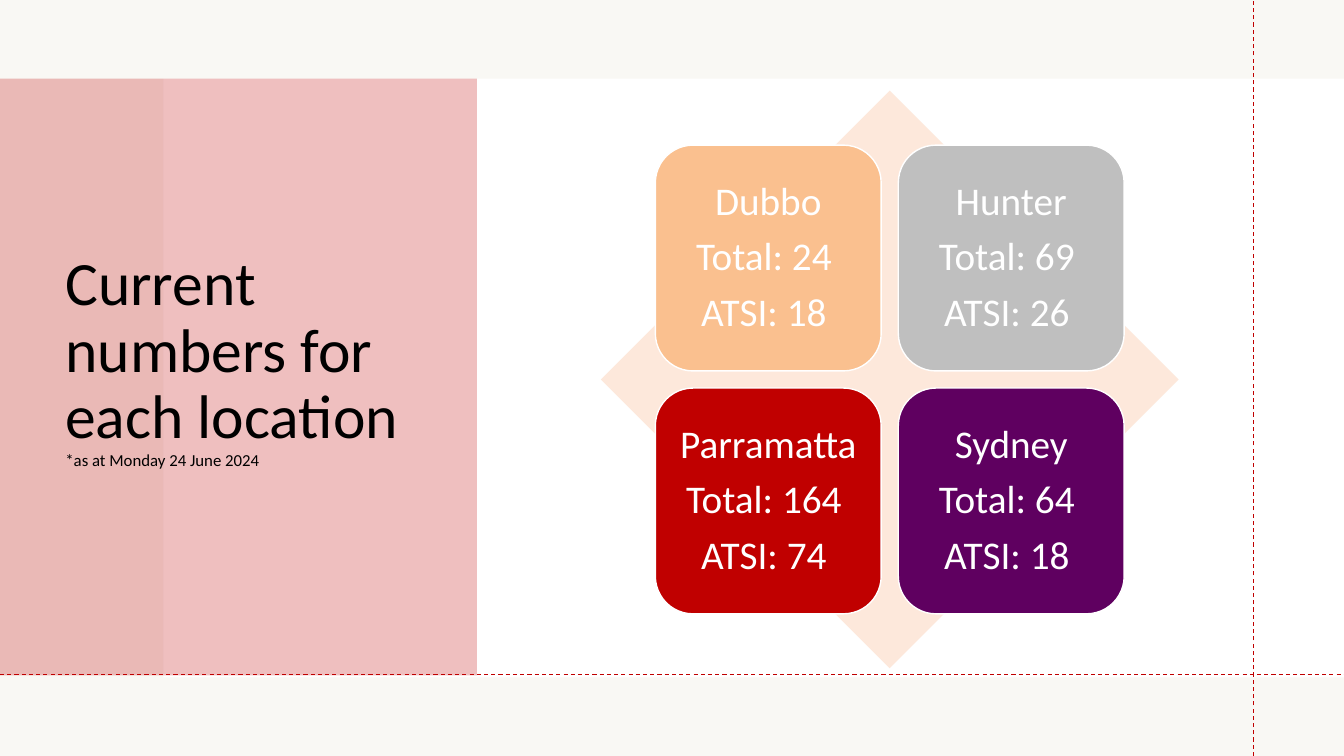
from pptx import Presentation
from pptx.dml.color import RGBColor
from pptx.enum.dml import MSO_LINE
from pptx.enum.shapes import MSO_CONNECTOR, MSO_SHAPE as SHAPE
from pptx.enum.text import MSO_ANCHOR, PP_ALIGN
from pptx.oxml.ns import qn
from pptx.util import Inches, Pt
from lxml import etree

# Content
TITLE = "Current numbers for each location"
NOTE = "*as at Monday 24 June 2024"
LOCATIONS = [
    ("FAC08F", ["Dubbo", "Total: 24 ", "ATSI: 18 "]),
    ("BFBFBF", ["Hunter", "Total: 69 ", "ATSI: 26 "]),
    ("C00000", ["Parramatta", "Total: 164 ", "ATSI: 74 "]),
    ("5F0060", ["Sydney", "Total: 64 ", "ATSI: 18 "]),
]

# Layout in inches
WIDTH, HEIGHT = 13.33, 7.5
BAND_TOP = 0.78
TILE_LEFT, TILE_TOP, TILE, TILE_STEP = 6.5, 1.44, 2.24, 2.41
GUIDES = [(12.43, HEIGHT, 12.43, 0), (0, 6.69, WIDTH, 6.69)]


def rgb(value):
    return RGBColor.from_string(value)


def add_shape(s, kind, box, color, alpha=None):
    sp = s.shapes.add_shape(kind, *map(Inches, box))
    sp.shadow.inherit = False
    sp.fill.solid()
    sp.fill.fore_color.rgb = rgb(color)
    sp.line.fill.background()
    if alpha is not None:
        clr = sp._element.spPr.find(qn("a:solidFill"))[0]
        etree.SubElement(clr, qn("a:alpha")).set("val", str(alpha * 1000))
    return sp


def add_run(p, text, size, color):
    r = p.add_run()
    r.text = text
    r.font.name = "Calibri"
    r.font.size = Pt(size)
    r.font.color.rgb = rgb(color)


def add_guide(s, ends):
    line = s.shapes.add_connector(MSO_CONNECTOR.STRAIGHT, *map(Inches, ends))
    line.line.color.rgb = rgb("C00000")
    line.line.width = Pt(0.75)
    line.line.dash_style = MSO_LINE.DASH
    etree.SubElement(line._element.spPr, qn("a:effectLst"))


def add_tile(s, index, color, lines):
    row, col = divmod(index, 2)
    box = (TILE_LEFT + col * TILE_STEP, TILE_TOP + row * TILE_STEP, TILE, TILE)
    sp = add_shape(s, SHAPE.ROUNDED_RECTANGLE, box, color)
    sp.line.color.rgb = rgb("FFFFFF")
    sp.line.width = Pt(1)
    tf = sp.text_frame
    tf.word_wrap = True
    tf.vertical_anchor = MSO_ANCHOR.MIDDLE
    tf.margin_left = tf.margin_right = tf.margin_top = tf.margin_bottom = Inches(0.12)
    for i, text in enumerate(lines):
        p = tf.add_paragraph() if i else tf.paragraphs[0]
        p.alignment = PP_ALIGN.CENTER
        p.line_spacing = 0.9
        p.space_after = Pt(9.5)
        add_run(p, text, 28, "FFFFFF")


def main():
    prs = Presentation()
    prs.slide_width, prs.slide_height = Inches(WIDTH), Inches(HEIGHT)
    s = prs.slides.add_slide(prs.slide_layouts[6])

    # Backdrop, white band and pink title panel
    add_shape(s, SHAPE.RECTANGLE, (0, 0, WIDTH, HEIGHT), "EEECE1", 35)
    add_shape(s, SHAPE.RECTANGLE, (1.62, BAND_TOP, 11.71, 5.94), "FFFFFF")
    add_shape(s, SHAPE.RECTANGLE, (0, BAND_TOP, 4.73, 5.92), "C00000", 25)

    # Title with its date note
    tf = s.shapes.add_textbox(*map(Inches, (0.55, 0.74, 3.95, 5.69))).text_frame
    tf.word_wrap = True
    tf.vertical_anchor = MSO_ANCHOR.MIDDLE
    p = tf.paragraphs[0]
    p.line_spacing = 0.9
    add_run(p, TITLE, 44, "000000")
    p.add_line_break()
    add_run(p, NOTE, 12, "000000")

    # Dashed guides
    for ends in GUIDES:
        add_guide(s, ends)

    # Diamond matrix of locations
    add_shape(s, SHAPE.DIAMOND, (5.96, 0.9, 5.73, 5.73), "FDE8DB")
    for index, (color, lines) in enumerate(LOCATIONS):
        add_tile(s, index, color, lines)

    prs.save("out.pptx")


if __name__ == "__main__":
    main()
